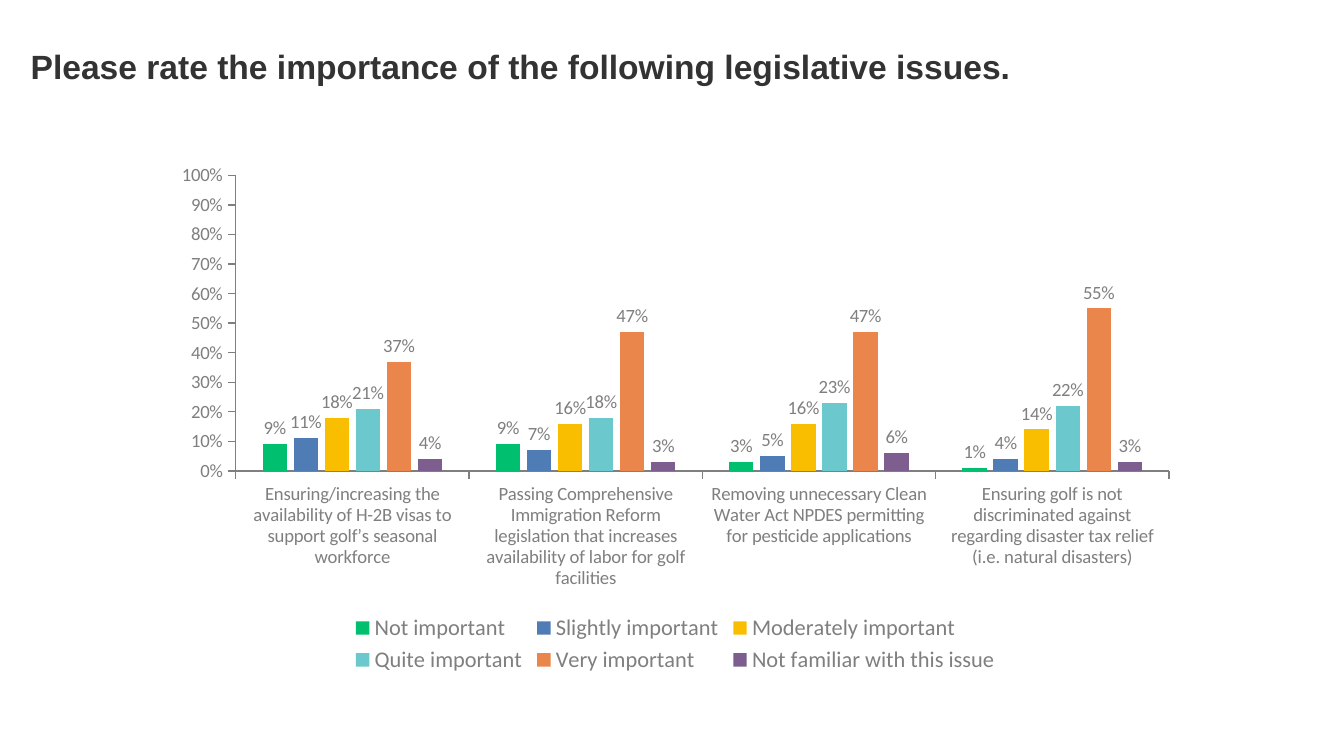
from pptx import Presentation
from pptx.chart.data import CategoryChartData
from pptx.dml.color import RGBColor
from pptx.enum import chart as ch
from pptx.enum.text import MSO_ANCHOR
from pptx.util import Inches, Pt

DARK = RGBColor(0x33, 0x33, 0x33)
GREY = RGBColor(0x7F, 0x7F, 0x7F)
GREEN = RGBColor(0x00, 0xBF, 0x6F)
BLUE = RGBColor(0x50, 0x7C, 0xB6)
YELLOW = RGBColor(0xF9, 0xBE, 0x00)
TEAL = RGBColor(0x6B, 0xC8, 0xCD)
ORANGE = RGBColor(0xEA, 0x85, 0x4B)
PURPLE = RGBColor(0x7D, 0x5E, 0x8F)

ISSUES = [
    "Ensuring/increasing the availability of H-2B visas to support golf’s seasonal workforce",
    "Passing Comprehensive Immigration Reform legislation that increases "
    "availability of labor for golf facilities",
    "Removing unnecessary Clean Water Act NPDES permitting for pesticide applications",
    "Ensuring golf is not discriminated against regarding disaster tax relief "
    "(i.e. natural disasters)",
]
RATINGS = [
    ("Not important", GREEN, (0.09, 0.09, 0.03, 0.01)),
    ("Slightly important", BLUE, (0.11, 0.07, 0.05, 0.04)),
    ("Moderately important", YELLOW, (0.18, 0.16, 0.16, 0.14)),
    ("Quite important", TEAL, (0.21, 0.18, 0.23, 0.22)),
    ("Very important", ORANGE, (0.37, 0.47, 0.47, 0.55)),
    ("Not familiar with this issue", PURPLE, (0.04, 0.03, 0.06, 0.03)),
]


def style_font(font, size, color, name="Calibri", bold=False):
    font.name = name
    font.size = Pt(size)
    font.bold = bold
    font.color.rgb = color


def add_text(page, content, left, top, width, height, anchor=MSO_ANCHOR.TOP, **style):
    box = page.shapes.add_textbox(Inches(left), Inches(top), Inches(width), Inches(height))
    frame = box.text_frame
    frame.word_wrap = True
    frame.vertical_anchor = anchor
    span = frame.paragraphs[0].add_run()
    span.text = content
    style_font(span.font, **style)


def style_axis(axis):
    axis.has_major_gridlines = False
    axis.major_tick_mark = ch.XL_TICK_MARK.OUTSIDE
    axis.minor_tick_mark = ch.XL_TICK_MARK.NONE
    axis.format.line.color.rgb = GREY
    axis.format.line.width = Pt(0.75)
    style_font(axis.tick_labels.font, 10, GREY)


def style_series(series, color):
    series.format.fill.solid()
    series.format.fill.fore_color.rgb = color
    series.invert_if_negative = False
    labels = series.data_labels
    labels.show_value = True
    labels.number_format = "0%"
    labels.number_format_is_linked = False
    labels.position = ch.XL_LABEL_POSITION.OUTSIDE_END
    style_font(labels.font, 10, GREY)


def add_ratings_chart(page, left, top, width, height):
    data = CategoryChartData(number_format="0%")
    data.categories = ISSUES
    for name, _, shares in RATINGS:
        data.add_series(name, shares)
    chart = page.shapes.add_chart(
        ch.XL_CHART_TYPE.COLUMN_CLUSTERED,
        Inches(left), Inches(top), Inches(width), Inches(height), data,
    ).chart
    chart.has_title = False
    style_font(chart.font, 18, DARK)

    plot = chart.plots[0]
    plot.vary_by_categories = False
    plot.gap_width = 219
    plot.overlap = -27
    for series, (_, color, _) in zip(plot.series, RATINGS):
        style_series(series, color)

    style_axis(chart.category_axis)
    chart.category_axis.tick_label_position = ch.XL_TICK_LABEL_POSITION.LOW
    shares_axis = chart.value_axis
    style_axis(shares_axis)
    shares_axis.minimum_scale = 0
    shares_axis.maximum_scale = 1
    shares_axis.major_unit = 0.1
    shares_axis.tick_labels.number_format = "0%"
    shares_axis.tick_labels.number_format_is_linked = False

    chart.has_legend = True
    chart.legend.position = ch.XL_LEGEND_POSITION.BOTTOM
    chart.legend.include_in_layout = False
    style_font(chart.legend.font, 12, GREY)


def main():
    deck = Presentation()
    deck.slide_width = Inches(10)
    deck.slide_height = deck.slide_width * 9 // 16
    page = deck.slides.add_slide(deck.slide_layouts[6])
    add_text(page, "Please rate the importance of the following legislative issues.",
             0.13, 0.09, 9, 0.6, anchor=MSO_ANCHOR.BOTTOM,
             size=18, color=DARK, name="Arial", bold=True)
    add_ratings_chart(page, 1.2, 1.15, 7.65, 3.9)
    deck.save("out.pptx")


if __name__ == "__main__":
    main()
